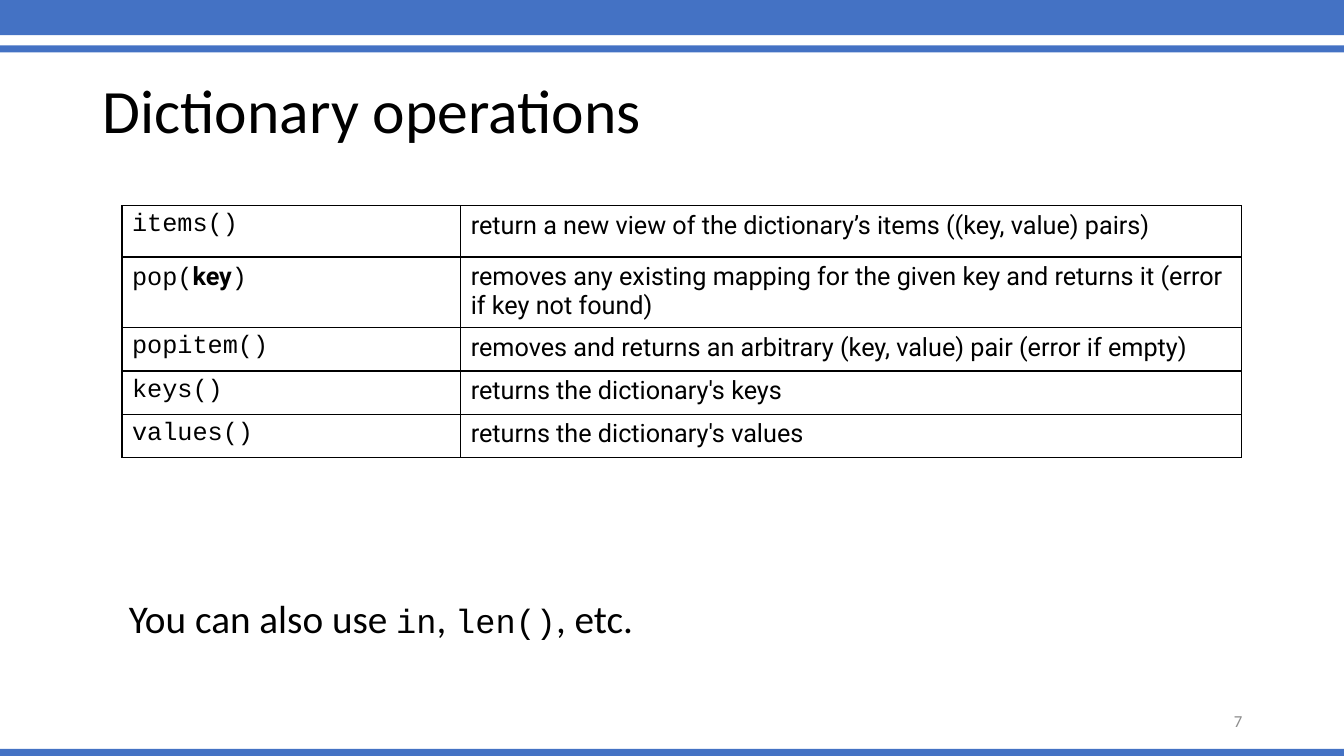
from dataclasses import dataclass
from typing import NamedTuple

from lxml.etree import SubElement
from pptx import Presentation
from pptx.dml.color import RGBColor
from pptx.enum.shapes import MSO_SHAPE as Shape
from pptx.enum.text import MSO_ANCHOR as Anchor, PP_ALIGN as Align
from pptx.oxml.ns import qn
from pptx.util import Inches, Pt

COLORS = {"band": "4472C4", "text": "000000", "page": "8C8C8C"}
BODY, CODE, TABLE = "Calibri", "Courier New", "Roboto"
SLIDE_WIDTH, SLIDE_HEIGHT = 13.33, 7.5


class Box(NamedTuple):
    left: float
    top: float
    width: float
    height: float

    def lengths(self):
        return [Inches(value) for value in self]


@dataclass
class Run:
    text: str
    font: str
    size: float = 18
    bold: bool = False
    color: str = "text"


@dataclass
class Operation:
    call: list[Run]
    description: str
    height: float = 0.43


BANDS = [
    Box(0, -0.03, SLIDE_WIDTH, 0.38),
    Box(0, 0.45, SLIDE_WIDTH, 0.07),
    Box(0, 7.43, SLIDE_WIDTH, 0.07),
]

OPERATIONS = [
    Operation([Run("items()", CODE)],
              "return a new view of the dictionary’s items ((key, value) pairs)", 0.51),
    Operation([Run("pop(", CODE), Run("key", TABLE, bold=True), Run(")", CODE)],
              "removes any existing mapping for the given key and returns it "
              "(error if key not found)", 0.4),
    Operation([Run("popitem()", CODE)],
              "removes and returns an arbitrary (key, value) pair (error if empty)"),
    Operation([Run("keys()", CODE)], "returns the dictionary's keys"),
    Operation([Run("values()", CODE)], "returns the dictionary's values"),
]
TABLE_BOX = Box(1.21, 2.04, 11.1, 2.2)
COLUMN_WIDTHS = [3.36, 7.74]


def write_runs(paragraph, runs: list[Run]) -> None:
    for item in runs:
        run = paragraph.add_run()
        run.text = item.text
        run.font.name = item.font
        run.font.size = Pt(item.size)
        run.font.bold = item.bold
        run.font.color.rgb = RGBColor.from_string(COLORS[item.color])


def add_text(slide, box: Box, runs: list[Run], *, align=Align.LEFT,
             line_spacing: float = 1.0) -> None:
    frame = slide.shapes.add_textbox(*box.lengths()).text_frame
    frame.word_wrap = True
    frame.vertical_anchor = Anchor.MIDDLE
    paragraph = frame.paragraphs[0]
    paragraph.alignment = align
    paragraph.line_spacing = line_spacing
    write_runs(paragraph, runs)


def add_band(slide, box: Box) -> None:
    shape = slide.shapes.add_shape(Shape.RECTANGLE, *box.lengths())
    shape.shadow.inherit = False
    shape.fill.solid()
    shape.fill.fore_color.rgb = RGBColor.from_string(COLORS["band"])
    shape.line.fill.background()


def add_borders(cell) -> None:
    properties = cell._tc.get_or_add_tcPr()
    for side in ("lnL", "lnR", "lnT", "lnB"):
        line = SubElement(properties, qn(f"a:{side}"), w=str(Pt(1)))
        fill = SubElement(line, qn("a:solidFill"))
        SubElement(fill, qn("a:srgbClr"), val=COLORS["text"])


def add_operations(slide) -> None:
    frame = slide.shapes.add_table(len(OPERATIONS), len(COLUMN_WIDTHS),
                                   *TABLE_BOX.lengths())
    table = frame.table
    table.first_row = table.horz_banding = False
    for column, width in zip(table.columns, COLUMN_WIDTHS):
        column.width = Inches(width)
    for row, operation in zip(table.rows, OPERATIONS):
        row.height = Inches(operation.height)
        contents = [operation.call, [Run(operation.description, TABLE)]]
        for cell, runs in zip(row.cells, contents):
            add_borders(cell)
            cell.fill.background()
            write_runs(cell.text_frame.paragraphs[0], runs)


def main() -> None:
    presentation = Presentation()
    presentation.slide_width = Inches(SLIDE_WIDTH)
    presentation.slide_height = Inches(SLIDE_HEIGHT)
    slide = presentation.slides.add_slide(presentation.slide_layouts[6])
    for band in BANDS:
        add_band(slide, band)
    add_text(slide, Box(0.92, 0.4, 11.5, 1.45),
             [Run("Dictionary operations", BODY, 44)], line_spacing=0.9)
    add_operations(slide)
    add_text(slide, Box(1.18, 5.43, 11.24, 1.45),
             [Run("You can also use ", BODY, 28), Run("in", CODE, 24),
              Run(", ", BODY, 28), Run("len()", CODE, 24),
              Run(", etc.", BODY, 28)], line_spacing=0.9)
    add_text(slide, Box(9.42, 6.95, 3, 0.4),
             [Run("7", BODY, 12, color="page")], align=Align.RIGHT)
    presentation.save("out.pptx")


if __name__ == "__main__":
    main()
